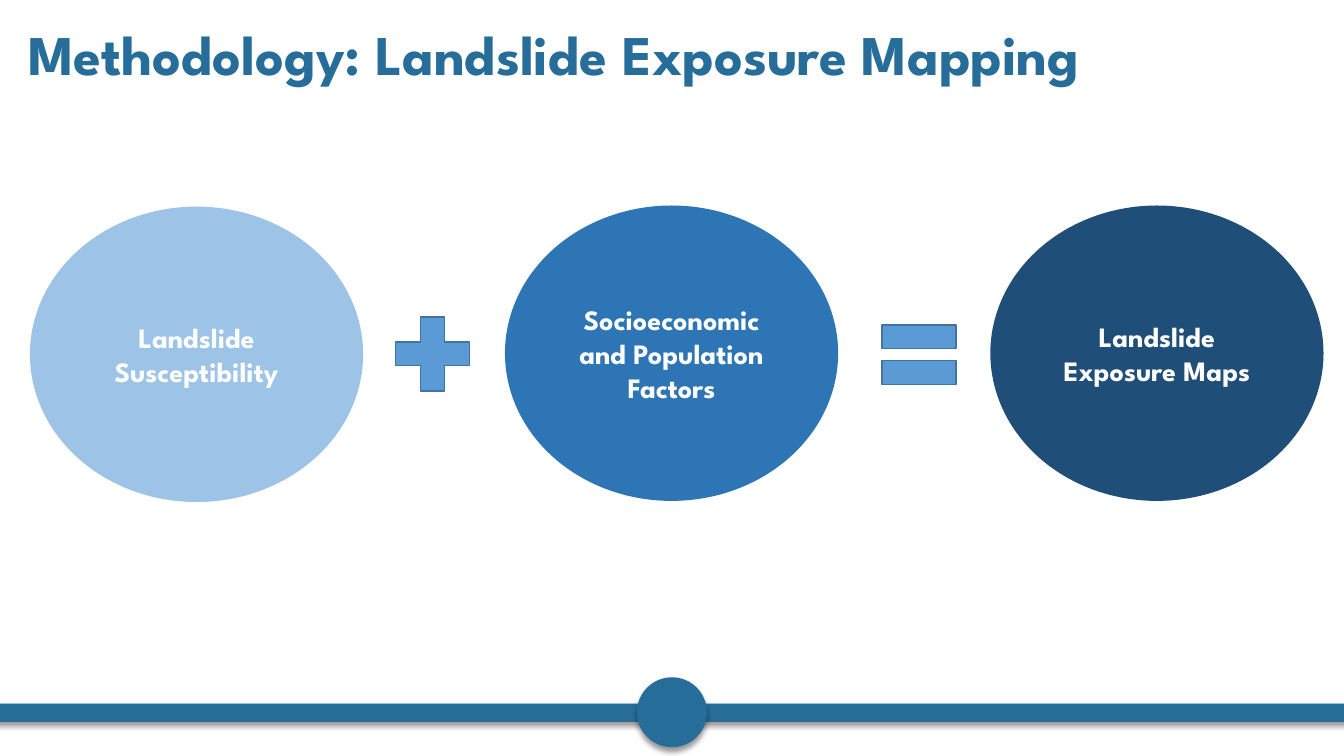
from dataclasses import dataclass

from lxml.etree import SubElement
from pptx import Presentation
from pptx.dml.color import RGBColor
from pptx.enum.shapes import MSO_SHAPE as Preset
from pptx.enum.text import MSO_ANCHOR as Anchor, PP_ALIGN as Align
from pptx.oxml.ns import qn
from pptx.shapes.autoshape import Shape
from pptx.slide import Slide
from pptx.text.text import TextFrame
from pptx.util import Pt

TEAL = RGBColor(0x26, 0x6E, 0x99)
LIGHT_BLUE = RGBColor(0x9D, 0xC3, 0xE6)
MID_BLUE = RGBColor(0x2E, 0x75, 0xB6)
NAVY = RGBColor(0x1F, 0x4E, 0x79)
SIGN_BLUE = RGBColor(0x5B, 0x9B, 0xD5)
SIGN_EDGE = RGBColor(0x43, 0x73, 0x9E)
WHITE = RGBColor(0xFF, 0xFF, 0xFF)

FONT = "League Spartan"


@dataclass
class Figure:
    preset: Preset
    left: float
    top: float
    width: float
    height: float
    fill: RGBColor
    edge: RGBColor | None = None
    text: str = ""
    shadow_angle: int | None = None


def oval(left: float, top: float, fill: RGBColor, text: str) -> Figure:
    return Figure(Preset.OVAL, left, top, 238, 211, fill, text=text)


def sign(preset: Preset, left: float, top: float) -> Figure:
    return Figure(preset, left, top, 72, 72, SIGN_BLUE, edge=SIGN_EDGE)


# Footer band and its knob
FOOTER = [
    Figure(Preset.ROUNDED_RECTANGLE, -8, 502.6, 973.4, 13, TEAL, shadow_angle=45),
    Figure(Preset.OVAL, 455, 483.8, 50, 50, TEAL, shadow_angle=90),
]

# The equation: susceptibility + factors = maps
EQUATION = [
    oval(21.4, 147.6, LIGHT_BLUE, "Landslide Susceptibility"),
    sign(Preset.MATH_PLUS, 272.9, 216.8),
    oval(360.7, 146.8, MID_BLUE, "Socioeconomic and Population Factors"),
    sign(Preset.MATH_EQUAL, 620.4, 217.4),
    oval(707.4, 146.8, NAVY, "Landslide Exposure Maps"),
]


def write(frame: TextFrame, text: str, size: float, color: RGBColor,
          para_format: dict) -> None:
    frame.word_wrap = True
    frame.vertical_anchor = Anchor.MIDDLE
    para = frame.paragraphs[0]
    for name, value in para_format.items():
        setattr(para, name, value)
    span = para.add_run()
    span.text = text
    for name, value in {"name": FONT, "size": Pt(size), "bold": True}.items():
        setattr(span.font, name, value)
    span.font.color.rgb = color


def add_shadow(shape: Shape, angle: int) -> None:
    effects = shape.element.spPr.find(qn("a:effectLst"))
    shadow = SubElement(effects, qn("a:outerShdw"), {
        "blurRad": str(Pt(4)), "dist": str(Pt(3)),
        "dir": str(angle * 60000), "rotWithShape": "0"})
    color = SubElement(shadow, qn("a:srgbClr"), val="000000")
    SubElement(color, qn("a:alpha"), val="40000")


def draw(page: Slide, figure: Figure) -> None:
    shape = page.shapes.add_shape(
        figure.preset, Pt(figure.left), Pt(figure.top),
        Pt(figure.width), Pt(figure.height))
    shape.shadow.inherit = False
    shape.fill.solid()
    shape.fill.fore_color.rgb = figure.fill
    if figure.edge is None:
        shape.line.fill.background()
    else:
        shape.line.color.rgb = figure.edge
        shape.line.width = Pt(1)
    if figure.shadow_angle is not None:
        add_shadow(shape, figure.shadow_angle)
    if figure.text:
        write(shape.text_frame, figure.text, 20, WHITE, {"alignment": Align.CENTER})


def main() -> None:
    deck = Presentation()
    deck.slide_width, deck.slide_height = Pt(960), Pt(540)
    page = deck.slides.add_slide(deck.slide_layouts[6])

    for figure in FOOTER:
        draw(page, figure)

    # Title
    box = page.shapes.add_textbox(Pt(13), Pt(27.4), Pt(932.4), Pt(27.4))
    write(box.text_frame, "Methodology: Landslide Exposure Mapping", 40, TEAL,
          {"alignment": Align.LEFT, "line_spacing": 0.9})

    for figure in EQUATION:
        draw(page, figure)

    deck.save("out.pptx")


if __name__ == "__main__":
    main()
